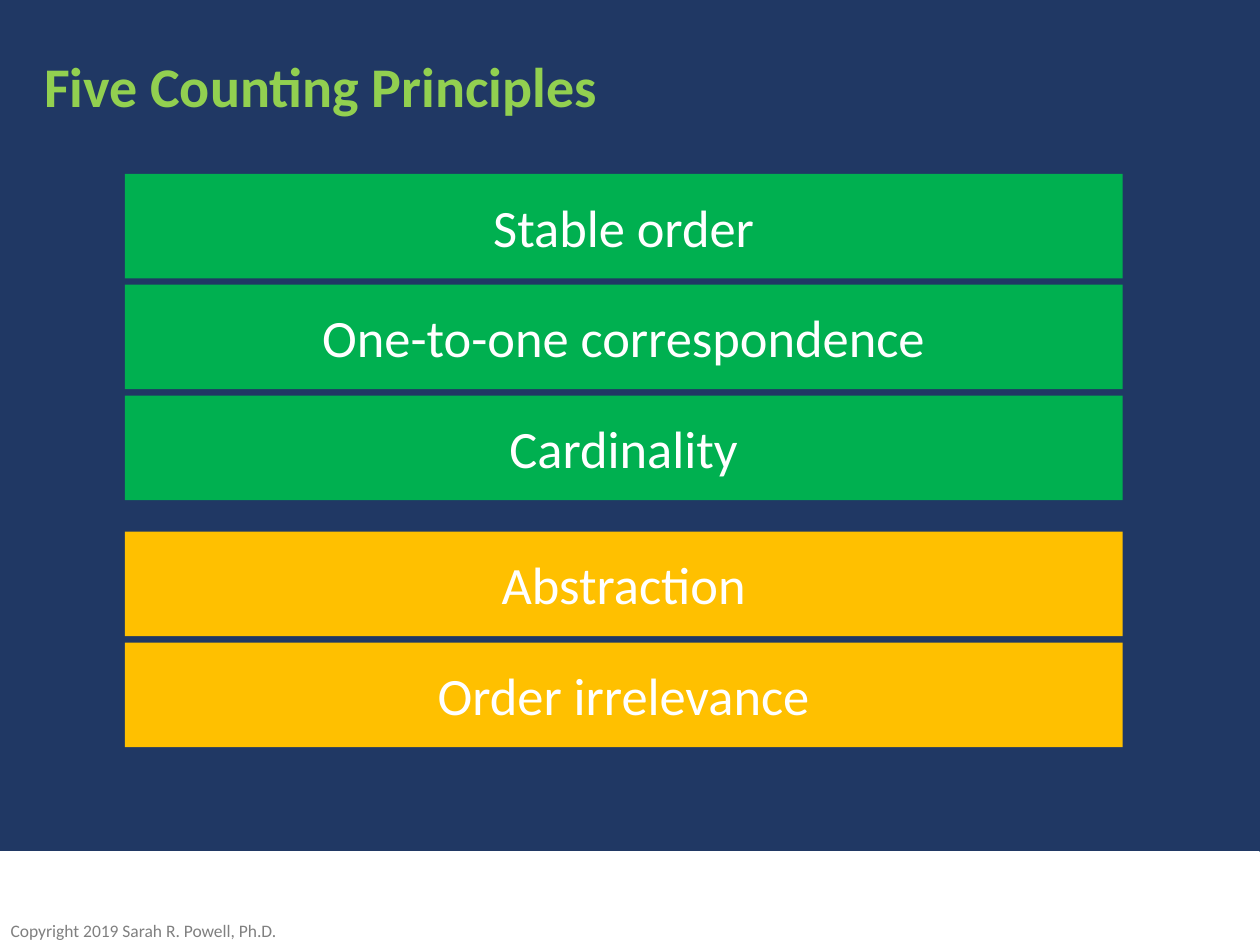
from dataclasses import dataclass

from pptx import Presentation
from pptx.dml.color import RGBColor
from pptx.enum.shapes import MSO_SHAPE
from pptx.enum.text import MSO_ANCHOR, PP_ALIGN
from pptx.util import Inches, Pt


@dataclass(frozen=True)
class Theme:
    font: str = "Calibri"
    navy: str = "203864"
    lime: str = "92D050"
    green: str = "00B050"
    gold: str = "FFC000"
    white: str = "FFFFFF"
    gray: str = "808080"
    head: int = 32
    label: int = 30
    note: int = 10


THEME = Theme()
GROUPS = [
    (THEME.green, ["Stable order", "One-to-one correspondence", "Cardinality"]),
    (THEME.gold, ["Abstraction", "Order irrelevance"]),
]


def paint(fill, color):
    fill.solid()
    fill.fore_color.rgb = RGBColor.from_string(color)


def write(frame, text, size, color, bold=False, align=PP_ALIGN.LEFT,
          space=1.0, pad=(0.1, 0.05, 0.1, 0.05)):
    frame.word_wrap = True
    frame.vertical_anchor = MSO_ANCHOR.MIDDLE
    (frame.margin_left, frame.margin_top,
     frame.margin_right, frame.margin_bottom) = map(Inches, pad)
    para = frame.paragraphs[0]
    para.alignment = align
    para.line_spacing = space
    run = para.add_run()
    run.text = text
    font = run.font
    font.name, font.size, font.bold = THEME.font, Pt(size), bold
    font.color.rgb = RGBColor.from_string(color)


def add_rect(slide, box, color):
    rect = slide.shapes.add_shape(MSO_SHAPE.RECTANGLE, *map(Inches, box))
    rect.shadow.inherit = False
    paint(rect.fill, color)
    rect.line.fill.background()
    return rect


def add_foot(slide, left, top, width, height):
    # White band with the copyright line at its lower left
    band = add_rect(slide, (left, top, width, height), THEME.white)
    paint(band.line.fill, THEME.white)
    band.line.width = Pt(1)
    note = slide.shapes.add_textbox(
        Inches(left), Inches(top + 0.54), Inches(2.29), Inches(0.17))
    write(note.text_frame, "Copyright 2019 Sarah R. Powell, Ph.D.", THEME.note,
          THEME.gray, align=PP_ALIGN.RIGHT, pad=(0, 0, 0.1, 0))


def add_title(slide, left, top, width, height):
    title = slide.shapes.title
    title.left, title.top = Inches(left), Inches(top)
    title.width, title.height = Inches(width), Inches(height)
    paint(title.fill, THEME.navy)
    write(title.text_frame, "Five Counting Principles", THEME.head,
          THEME.lime, bold=True, space=1.1)


def add_bars(slide, left, top, width, height):
    # Equal bars: a thin gap within a group, a wide one between groups
    thin, wide = 0.05, 0.25
    count = sum(len(names) for _, names in GROUPS)
    breaks = len(GROUPS) - 1
    tall = (height - wide * breaks - thin * (count - 1 - breaks)) / count
    for color, names in GROUPS:
        for name in names:
            bar = add_rect(slide, (left, top, width, tall), color)
            write(bar.text_frame, name, THEME.label, THEME.white,
                  align=PP_ALIGN.CENTER)
            top += tall + thin
        top += wide - thin


def main():
    deck = Presentation()
    deck.slide_width, deck.slide_height = Inches(10), Inches(7.5)
    slide = deck.slides.add_slide(deck.slide_layouts[5])
    paint(slide.background.fill, THEME.navy)
    add_foot(slide, 0, 6.76, 9.99, 0.74)
    add_title(slide, 0.25, 0.25, 9.5, 0.8)
    add_bars(slide, 0.99, 1.38, 7.92, 4.55)
    deck.save("out.pptx")


if __name__ == "__main__":
    main()
